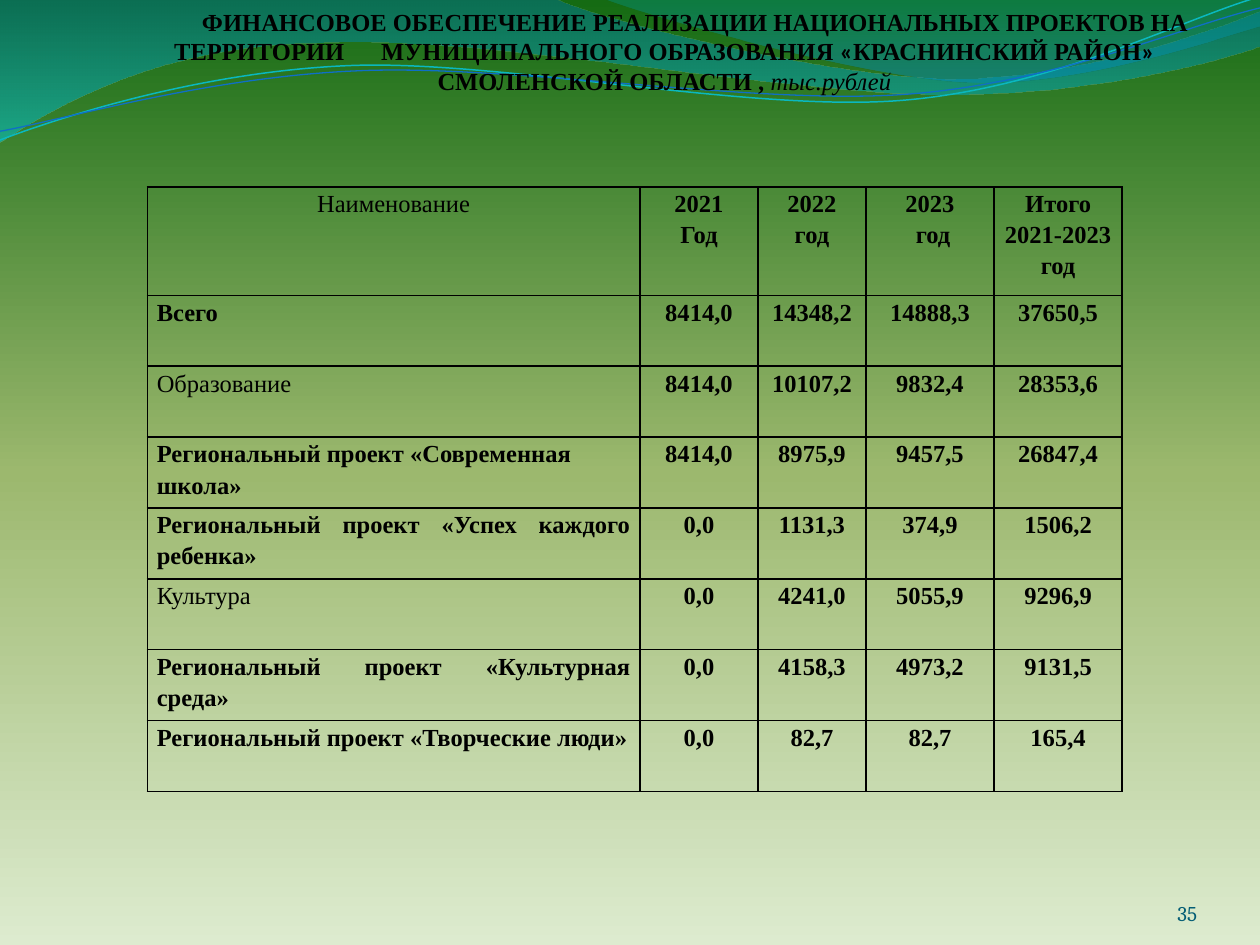
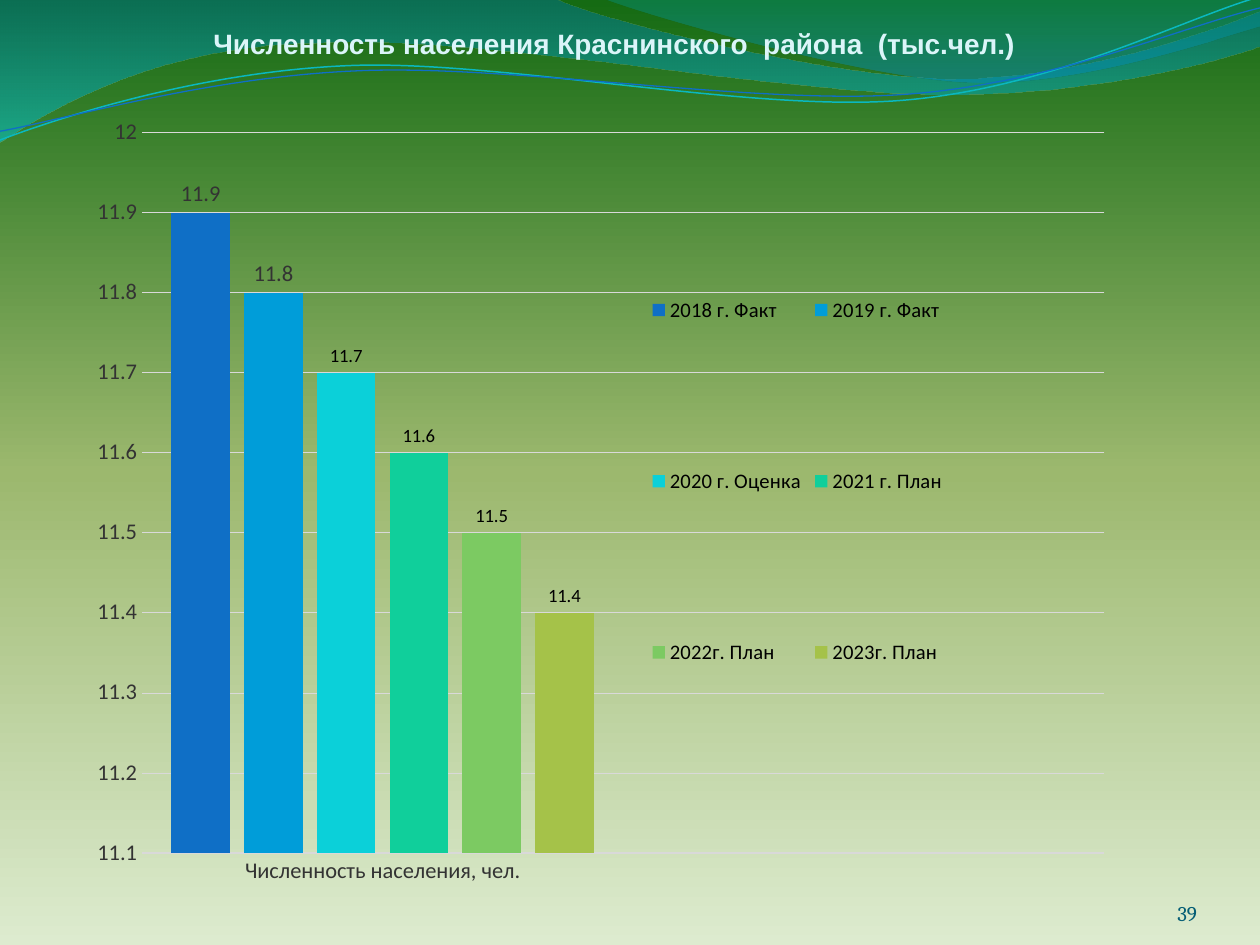
from lxml import etree
from pptx import Presentation
from pptx.chart.data import CategoryChartData
from pptx.dml.color import RGBColor
from pptx.enum.chart import XL_CHART_TYPE, XL_LABEL_POSITION, XL_LEGEND_POSITION, XL_TICK_MARK
from pptx.enum.text import MSO_ANCHOR, MSO_AUTO_SIZE, PP_ALIGN
from pptx.oxml.ns import qn
from pptx.util import Pt

COLUMNS = XL_CHART_TYPE.COLUMN_CLUSTERED
OUTSIDE_END = XL_LABEL_POSITION.OUTSIDE_END
LEGEND_RIGHT = XL_LEGEND_POSITION.RIGHT
NO_TICK = XL_TICK_MARK.NONE
TOP, MIDDLE, BOTTOM = MSO_ANCHOR.TOP, MSO_ANCHOR.MIDDLE, MSO_ANCHOR.BOTTOM
NO_AUTOFIT = MSO_AUTO_SIZE.NONE
LEFT, CENTER, RIGHT, JUSTIFY = PP_ALIGN.LEFT, PP_ALIGN.CENTER, PP_ALIGN.RIGHT, PP_ALIGN.JUSTIFY

BLACK = RGBColor(0x00, 0x00, 0x00)
DARK_GREY = RGBColor(0x33, 0x33, 0x33)
GRID_GREY = RGBColor(0xD9, 0xD9, 0xD9)
PALE_CYAN = RGBColor(0xDB, 0xF5, 0xF9)
NUMBER_BLUE = RGBColor(0x04, 0x5D, 0x75)
PALE_GREEN = RGBColor(0xDD, 0xEB, 0xCF)
MID_GREEN = RGBColor(0x9C, 0xB8, 0x6E)
DEEP_GREEN = RGBColor(0x15, 0x6B, 0x13)
BLUE = RGBColor(0x0F, 0x6F, 0xC6)
SKY = RGBColor(0x00, 0x9D, 0xD9)
CYAN = RGBColor(0x0B, 0xD0, 0xD9)
MINT = RGBColor(0x10, 0xCF, 0x9B)
GREEN = RGBColor(0x7C, 0xCA, 0x62)
OLIVE = RGBColor(0xA5, 0xC2, 0x49)
LINE_CYAN = RGBColor(0x0A, 0xB8, 0xBF)
WAVE_BLUE = RGBColor(0x00, 0x74, 0xA1)
WAVE_CYAN = RGBColor(0x00, 0xC6, 0xCF)
WAVE_TEAL = RGBColor(0x00, 0xA1, 0xA9)
WAVE_SKY = RGBColor(0x00, 0x8B, 0xBF)

SERIF, SANS, CHART_FONT, NUMBER_FONT = "Times New Roman", "Arial", "Calibri", "Cambria"

# Outlines of the waves: a start, then steps of one point (line) or three (curve)
BIG_WAVE = [(0, -0.7), [(317, -0.7)],
            [(343, 12), (478, 45), (546, 45)], [(614, 45), (690, 19), (720, 6.5)],
            [(720.7, 26)],
            [(708, 32), (626, 55), (537, 54)], [(448, 54), (275, 20), (185, 24.5)],
            [(93, 25), (33, 60), (-0.7, 81.4)]]
SMALL_WAVE = [(345, -0.7), [(366.5, 8), (491, 44.5), (553.5, 47)],
              [(616, 49.5), (692, 23), (720, 15)], [(720, 0)]]
CYAN_LINE = [(0, 80), [(34.5, 67), (114, 41), (199.5, 37.5)],
             [(284.5, 34), (427, 64), (513.5, 57.5)], [(600, 51), (675.5, 11), (718.5, -1.5)]]
BLUE_LINE = [(0, 75), [(34, 69), (118, 44), (204, 40.5)],
             [(290, 36.5), (430, 60), (516, 54)], [(602, 48), (676, 15), (720, 4.5)]]

PROJECT_ROWS = [  # name, bold, alignment, values
    ("Всего", True, JUSTIFY, "8414,0 14348,2 14888,3 37650,5"),
    ("Образование", False, JUSTIFY, "8414,0 10107,2 9832,4 28353,6"),
    ("Региональный проект «Современная школа»", True, LEFT, "8414,0 8975,9 9457,5 26847,4"),
    ("Региональный проект «Успех каждого ребенка»", True, JUSTIFY, "0,0 1131,3 374,9 1506,2"),
    ("Культура", False, JUSTIFY, "0,0 4241,0 5055,9 9296,9"),
    ("Региональный проект «Культурная среда»", True, JUSTIFY, "0,0 4158,3 4973,2 9131,5"),
    ("Региональный проект «Творческие люди»", True, JUSTIFY, "0,0 82,7 82,7 165,4"),
]
PROJECT_HEADER = [["Наименование"], ["2021", "Год"], ["2022 год"], ["2023", " год"],
                  ["Итого 2021-2023 год"]]

POPULATION = [  # name, value, colour, label size
    ("2018 г. Факт", 11.9, BLUE, 12.8),
    ("2019 г. Факт", 11.8, SKY, 12.9),
    ("2020 г. Оценка", 11.7, CYAN, None),
    ("2021 г. План", 11.6, MINT, None),
    ("2022г. План", 11.5, GREEN, None),
    ("2023г. План", 11.4, OLIVE, None),
]


def style_font(font, name, size, color, bold=False, italic=False):
    font.name, font.size, font.bold, font.italic = name, Pt(size), bold, italic
    font.color.rgb = color


def add_run(p, text, *style, **flags):
    r = p.add_run()
    r.text = text
    style_font(r.font, *style, **flags)
    return r


def place(sp, box):
    sp.left, sp.top, sp.width, sp.height = (Pt(v) for v in box)


def set_gradient(owner, fill, stops, angle):
    """Give a fill (position, colour, opacity) stops; the angle runs anticlockwise."""
    fill.gradient()
    fill.gradient_angle = angle
    gs_list = owner.xpath(".//a:gradFill/a:gsLst")[0]
    for gs in list(gs_list):
        gs_list.remove(gs)
    for position, color, opacity in stops:
        gs = etree.SubElement(gs_list, qn("a:gs"), pos=str(position * 1000))
        clr = etree.SubElement(gs, qn("a:srgbClr"), val=str(color))
        if opacity < 100:
            etree.SubElement(clr, qn("a:alpha"), val=str(opacity * 1000))


def add_outline(s, outline, close):
    """Build a freeform, then join each step of three points into one cubic curve."""
    start, *steps = outline
    builder = s.shapes.build_freeform(Pt(start[0]), Pt(start[1]))
    builder.add_line_segments([(Pt(x), Pt(y)) for step in steps for x, y in step], close=close)
    sp = builder.convert_to_shape()
    sp.shadow.inherit = False
    segments = iter(sp.element.xpath(".//a:lnTo"))
    for step in steps:
        group = [next(segments) for _ in step]
        if len(group) == 3:
            curve = etree.Element(qn("a:cubicBezTo"))
            group[0].addprevious(curve)
            for segment in group:
                curve.append(segment[0])
                segment.getparent().remove(segment)
    return sp


def decorate_master(prs, s):
    """Background and waves, drawn on a slide and then moved to the master."""
    master = prs.slide_master
    set_gradient(master.element, master.background.fill,
                 [(0, PALE_GREEN, 100), (50, MID_GREEN, 100), (100, DEEP_GREEN, 100)], 90)
    waves = []
    for outline, stops in ((BIG_WAVE, [(0, WAVE_BLUE, 45), (100, WAVE_CYAN, 55)]),
                           (SMALL_WAVE, [(0, WAVE_TEAL, 30), (80, WAVE_SKY, 45)])):
        sp = add_outline(s, outline, True)
        set_gradient(sp.element, sp.fill, stops, 270)
        sp.line.fill.background()
        waves.append(sp)
    for outline, color, width in ((CYAN_LINE, LINE_CYAN, 0.85), (BLUE_LINE, BLUE, 0.75)):
        sp = add_outline(s, outline, False)
        sp.fill.background()
        sp.line.color.rgb, sp.line.width = color, Pt(width)
        waves.append(sp)
    for i, sp in enumerate(waves):
        sp.element.nvSpPr.cNvPr.set("id", str(100 + i))
        master.shapes.element.insert(2 + i, sp.element)


def format_title(s, box, anchor):
    """Place the title placeholder and return its paragraph."""
    title = s.shapes.title
    place(title, box)
    tf = title.text_frame
    tf.word_wrap, tf.auto_size, tf.vertical_anchor = True, NO_AUTOFIT, anchor
    p = tf.paragraphs[0]
    p.alignment = CENTER
    return p


def add_page_number(s, number):
    tf = s.shapes.add_textbox(Pt(624), Pt(500.4), Pt(60), Pt(28.8)).text_frame
    tf.word_wrap, tf.vertical_anchor = True, BOTTOM
    tf.margin_left = tf.margin_top = tf.margin_right = tf.margin_bottom = 0
    p = tf.paragraphs[0]
    p.alignment = RIGHT
    add_run(p, number, NUMBER_FONT, 12, NUMBER_BLUE)


def fill_cell(cell, lines, bold, alignment):
    cell.margin_left = cell.margin_right = Pt(5.4)
    cell.margin_top = cell.margin_bottom = 0
    cell.vertical_anchor = TOP
    cell.fill.background()
    tf = cell.text_frame
    for i, line in enumerate(lines):
        p = tf.add_paragraph() if i else tf.paragraphs[0]
        p.alignment, p.line_spacing = alignment, 1.15
        add_run(p, line, SERIF, 14, BLACK, bold=bold)
    # Borders come before the fill in the cell properties
    tc_pr = cell._tc.get_or_add_tcPr()
    for i, side in enumerate(("lnL", "lnR", "lnT", "lnB")):
        ln = etree.Element(qn(f"a:{side}"), w=str(Pt(1)))
        solid = etree.SubElement(ln, qn("a:solidFill"))
        etree.SubElement(solid, qn("a:srgbClr"), val=str(BLACK))
        tc_pr.insert(i, ln)


def add_project_table(s, box):
    rows, cols = len(PROJECT_ROWS) + 1, len(PROJECT_HEADER)
    table = s.shapes.add_table(rows, cols, *(Pt(v) for v in box)).table
    table.first_row = table.horz_banding = False
    for col, width in zip(table.columns, (281.5, 67.5, 61.7, 73.2, 73.2)):
        col.width = Pt(width)
    for i, row in enumerate(table.rows):
        row.height = Pt(40.5 if i else 62)
    for j, lines in enumerate(PROJECT_HEADER):
        fill_cell(table.cell(0, j), lines, j > 0, CENTER)
    for i, (name, bold, alignment, values) in enumerate(PROJECT_ROWS, 1):
        fill_cell(table.cell(i, 0), [name], bold, alignment)
        for j, value in enumerate(values.split(), 1):
            fill_cell(table.cell(i, j), [value], True, CENTER)


def set_layout(parent, index, box, area, inner=False):
    """Fix a chart part at a box in points inside a chart area of the given size."""
    layout = parent.find(qn("c:layout"))
    if layout is None:
        layout = etree.Element(qn("c:layout"))
        parent.insert(index, layout)
    manual = etree.SubElement(layout, qn("c:manualLayout"))
    entries = [("layoutTarget", "inner")] if inner else []
    entries += [("xMode", "edge"), ("yMode", "edge")]
    entries += [(tag, length / side) for tag, length, side in zip("xywh", box, area * 2)]
    for tag, value in entries:
        etree.SubElement(manual, qn(f"c:{tag}"), val=str(value))


def add_population_chart(s, box):
    data = CategoryChartData()
    data.categories = ["Численность населения, чел.", ""]
    for name, value, _, _ in POPULATION:
        data.add_series(name, (value, None))
    chart = s.shapes.add_chart(COLUMNS, *(Pt(v) for v in box), data).chart
    chart.has_title = False
    style_font(chart.font, CHART_FONT, 10.7, BLACK)

    # Columns and their labels
    plot = chart.plots[0]
    plot.gap_width, plot.overlap, plot.vary_by_categories = 100, -24, False
    for series, (_, _, color, label_size) in zip(plot.series, POPULATION):
        series.format.fill.solid()
        series.format.fill.fore_color.rgb = color
        labels = series.data_labels
        labels.show_value, labels.position = True, OUTSIDE_END
        style_font(labels.font, CHART_FONT, label_size or 10.7, DARK_GREY if label_size else BLACK)

    # Axes
    for axis in (chart.category_axis, chart.value_axis):
        axis.major_tick_mark = axis.minor_tick_mark = NO_TICK
        style_font(axis.tick_labels.font, CHART_FONT, 12.8, DARK_GREY)
    cat_line = chart.category_axis.format.line
    cat_line.color.rgb, cat_line.width = GRID_GREY, Pt(1.07)
    axis = chart.value_axis
    axis.minimum_scale, axis.maximum_scale, axis.major_unit = 11.1, 12, 0.1
    axis.format.line.fill.background()
    grid = axis.major_gridlines.format.line
    grid.color.rgb, grid.width = GRID_GREY, Pt(0.27)

    # Legend and layout
    chart.has_legend = True
    legend = chart.legend
    legend.position, legend.include_in_layout = LEGEND_RIGHT, False
    style_font(legend.font, CHART_FONT, 11.8, BLACK)
    area = box[2:]
    set_layout(legend._element, 1, (335.2, 30.3, 173.5, 377), area)
    set_layout(chart.element.xpath(".//c:plotArea")[0], 0, (47.3, 19.6, 550, 411.6), area, inner=True)


def build_projects_slide(s):
    p = format_title(s, (56.4, 0, 646.5, 88.5), TOP)
    s.shapes.title.text_frame.margin_top = Pt(3.9)
    p._p.get_or_add_pPr().set("indent", str(Pt(35.3)))
    style = (14, BLACK)
    add_run(p, "ФИНАНСОВОЕ ОБЕСПЕЧЕНИЕ РЕАЛИЗАЦИИ НАЦИОНАЛЬНЫХ ПРОЕКТОВ НА ТЕРРИТОРИИ",
            SERIF, *style, bold=True)
    gap = add_run(p, " ", SERIF, *style, bold=True)
    gap.font._element.set("spc", "1750")
    for text, font in (("МУНИЦИПАЛЬНОГО ОБРАЗОВАНИЯ ", SERIF), ("«", CHART_FONT),
                       ("КРАСНИНСКИЙ РАЙОН", SERIF), ("»", CHART_FONT),
                       (" СМОЛЕНСКОЙ ОБЛАСТИ ,", SERIF)):
        add_run(p, text, font, *style, bold=True)
    add_run(p, " тыс.рублей", SERIF, *style, italic=True)
    add_project_table(s, (84.2, 106.8, 557, 345.5))
    add_page_number(s, "35")


def build_population_slide(s):
    p = format_title(s, (39.3, 11.2, 623.5, 26.6), MIDDLE)
    add_run(p, "Численность населения Краснинского  района  (тыс.чел.)", SANS, 16, PALE_CYAN, bold=True)
    add_population_chart(s, (33.8, 56.2, 638, 478))
    add_page_number(s, "39")


def main():
    prs = Presentation()
    prs.slide_width, prs.slide_height = Pt(720), Pt(540)
    title_only = prs.slide_layouts[5]
    projects, population = (prs.slides.add_slide(title_only) for _ in range(2))
    decorate_master(prs, projects)
    build_projects_slide(projects)
    build_population_slide(population)
    prs.save("out.pptx")


if __name__ == "__main__":
    main()
